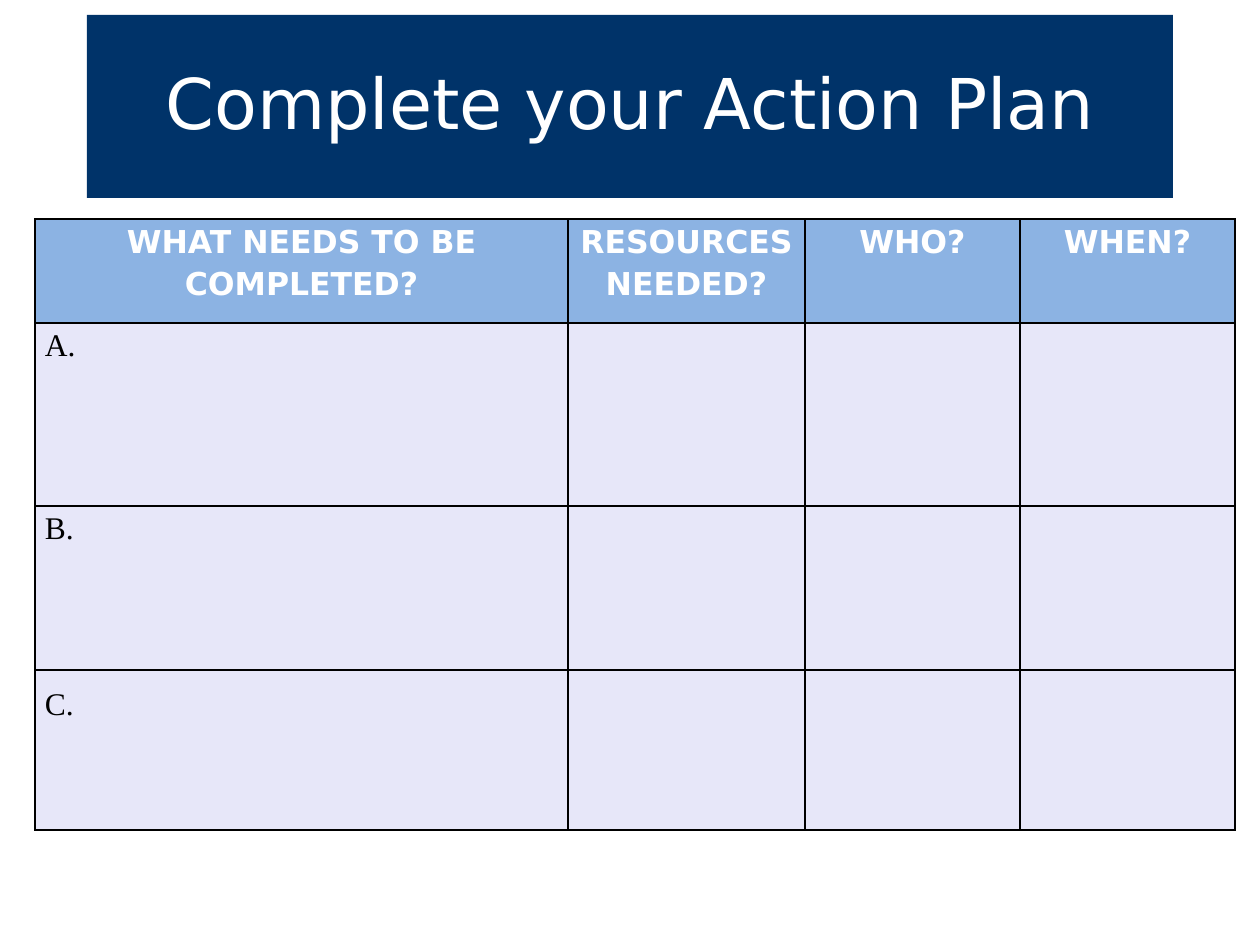
"""Build an action plan slide with a title banner and a planning table."""
from dataclasses import dataclass

from lxml import etree
from pptx import Presentation
from pptx.dml.color import RGBColor
from pptx.enum.shapes import MSO_SHAPE
from pptx.enum.text import MSO_ANCHOR, PP_ALIGN
from pptx.oxml.ns import qn
from pptx.util import Pt

RECTANGLE = MSO_SHAPE.RECTANGLE
MIDDLE = MSO_ANCHOR.MIDDLE
CENTER, LEFT = PP_ALIGN.CENTER, PP_ALIGN.LEFT

EMU_PER_PX = 914400 / 126
COLORS = {
    "banner": "003369",
    "header": "8CB3E3",
    "body": "E7E7F9",
    "white": "FFFFFF",
    "black": "000000",
}
SANS, SERIF = "DejaVu Sans", "Times New Roman"


@dataclass(frozen=True)
class TextStyle:
    font: str
    size: int
    color: str
    align: PP_ALIGN
    line_spacing: float
    bold: bool = False


@dataclass(frozen=True)
class PlanRow:
    height: int
    texts: tuple[str, ...]
    fill: str
    style: TextStyle
    top_margin: int = 0


TITLE_STYLE = TextStyle(SANS, 40, "white", CENTER, 0.9)
HEADER_STYLE = TextStyle(SANS, 18, "white", CENTER, 1.15, True)
BODY_STYLE = TextStyle(SERIF, 18, "black", LEFT, 1.15)

COLUMN_WIDTHS = (533, 237, 215, 215)
PLAN_ROWS = (
    PlanRow(
        104,
        ("WHAT NEEDS TO BE COMPLETED?", "RESOURCES NEEDED?", "WHO?", "WHEN?"),
        "header",
        HEADER_STYLE,
    ),
    PlanRow(183, ("A.", "", "", ""), "body", BODY_STYLE),
    PlanRow(164, ("B.", "", "", ""), "body", BODY_STYLE),
    PlanRow(160, ("C.", "", "", ""), "body", BODY_STYLE, 12),
)


def px(length: int) -> int:
    return round(length * EMU_PER_PX)


def color(name: str) -> RGBColor:
    return RGBColor.from_string(COLORS[name])


def write_text(text_frame, text: str, style: TextStyle) -> None:
    paragraph = text_frame.paragraphs[0]
    paragraph.text = text
    paragraph.alignment = style.align
    paragraph.line_spacing = style.line_spacing
    paragraph.font.name = style.font
    paragraph.font.size = Pt(style.size)
    paragraph.font.bold = style.bold
    paragraph.font.color.rgb = color(style.color)


def add_borders(cell) -> None:
    properties = cell._tc.get_or_add_tcPr()
    for index, side in enumerate(("a:lnL", "a:lnR", "a:lnT", "a:lnB")):
        line = etree.Element(qn(side), w=str(Pt(1)))
        fill = etree.SubElement(line, qn("a:solidFill"))
        etree.SubElement(fill, qn("a:srgbClr"), val=COLORS["black"])
        properties.insert(index, line)


def add_title(slide, text: str) -> None:
    banner = slide.shapes.add_shape(RECTANGLE, px(87), px(15), px(1086), px(183))
    banner.shadow.inherit = False
    banner.fill.solid()
    banner.fill.fore_color.rgb = color("banner")
    banner.line.fill.background()
    banner.text_frame.word_wrap = True
    banner.text_frame.vertical_anchor = MIDDLE
    write_text(banner.text_frame, text, TITLE_STYLE)


def fill_cell(cell, text: str, row: PlanRow) -> None:
    cell.margin_left = cell.margin_right = px(10)
    cell.margin_top, cell.margin_bottom = px(row.top_margin), 0
    cell.fill.solid()
    cell.fill.fore_color.rgb = color(row.fill)
    add_borders(cell)
    write_text(cell.text_frame, text, row.style)


def add_plan_table(slide) -> None:
    width = sum(COLUMN_WIDTHS)
    height = sum(row.height for row in PLAN_ROWS)
    table = slide.shapes.add_table(
        len(PLAN_ROWS), len(COLUMN_WIDTHS), px(35), px(219), px(width), px(height)
    ).table
    for column, column_width in zip(table.columns, COLUMN_WIDTHS):
        column.width = px(column_width)
    for table_row, row in zip(table.rows, PLAN_ROWS):
        table_row.height = px(row.height)
        for cell, text in zip(table_row.cells, row.texts):
            fill_cell(cell, text, row)


def main() -> None:
    presentation = Presentation()
    presentation.slide_width = px(1260)
    presentation.slide_height = px(945)
    slide = presentation.slides.add_slide(presentation.slide_layouts[6])
    add_plan_table(slide)
    add_title(slide, "Complete your Action Plan")
    presentation.save("out.pptx")


if __name__ == "__main__":
    main()
